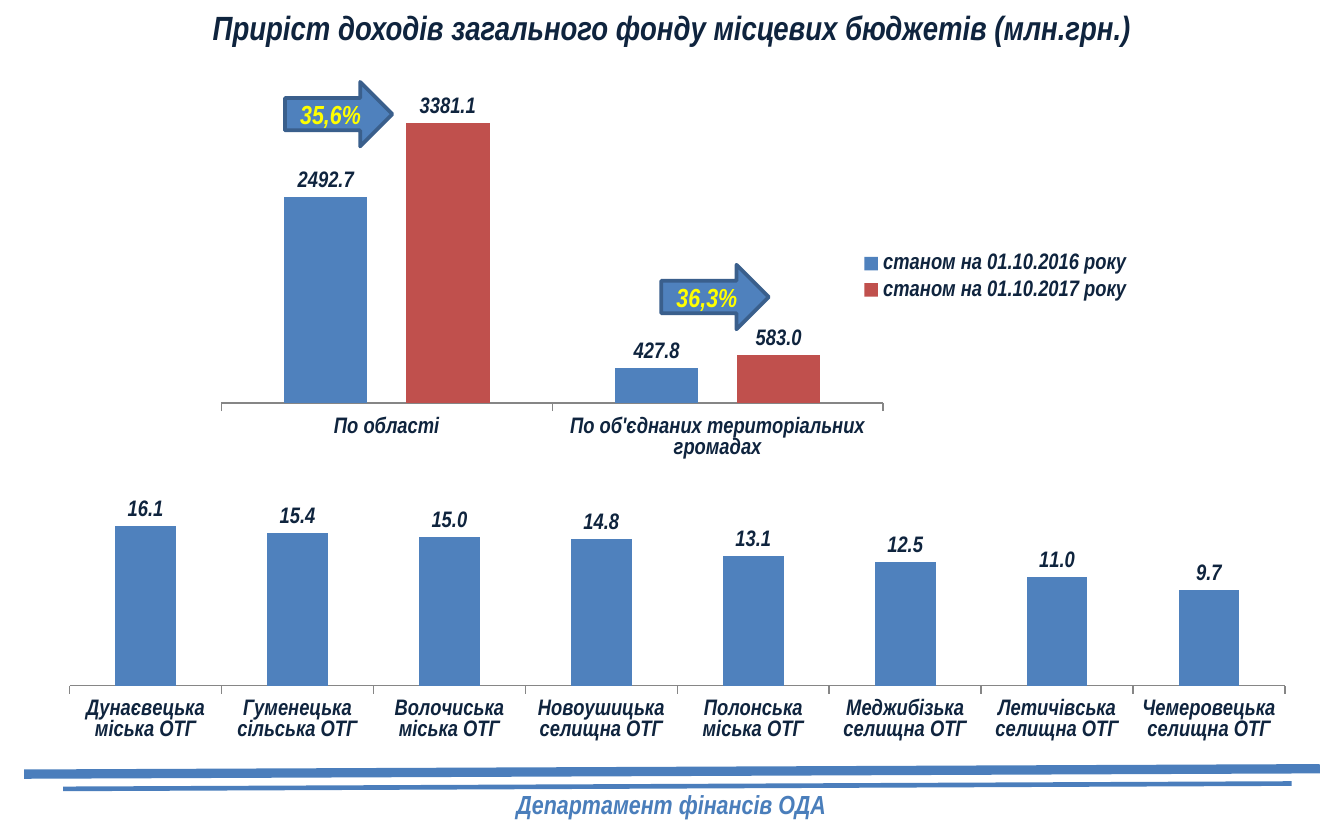
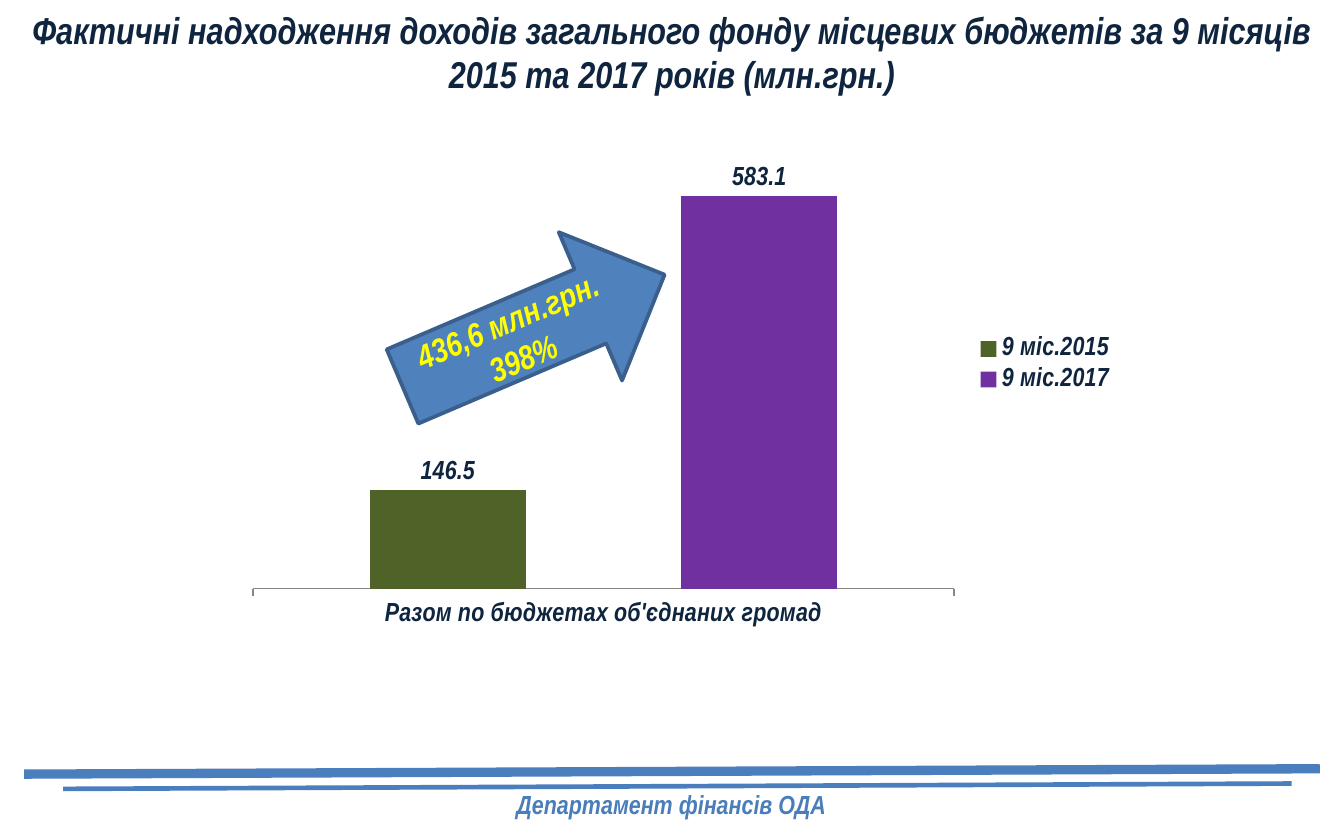
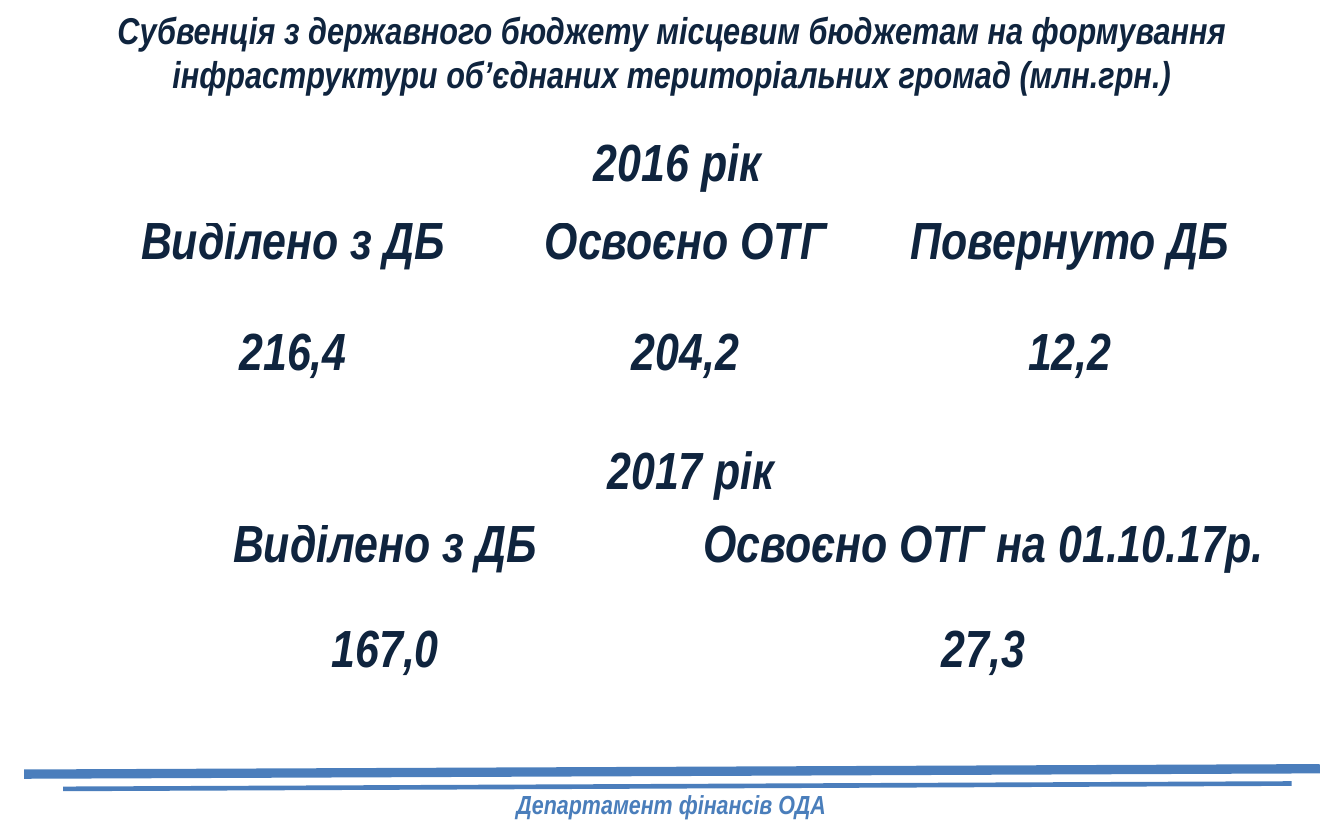
"""Local budget revenue: three slides with charts, arrows and tables."""
from dataclasses import dataclass
from typing import NamedTuple, Optional

from lxml import etree
from pptx import Presentation
from pptx import util as u
from pptx.chart.data import CategoryChartData
from pptx.dml.color import RGBColor
from pptx.enum import chart as charts, shapes, text
from pptx.oxml import ns

# Grid: 100 columns by 62.5 rows
COLUMNS, ROWS = 100, 62.5
SLIDE_WIDTH, SLIDE_HEIGHT = u.Inches(10), u.Inches(6.25)

FONT = "Arial Narrow"
NAVY = RGBColor(0x0F, 0x24, 0x3E)
FOOTER_BLUE = RGBColor(0x4A, 0x7E, 0xBB)
BAND_BLUE = RGBColor(0x4B, 0x7E, 0xBC)
BLUE = RGBColor(0x4F, 0x81, 0xBD)
ARROW_EDGE = RGBColor(0x3A, 0x5F, 0x8C)
RED = RGBColor(0xC0, 0x50, 0x4D)
OLIVE = RGBColor(0x4F, 0x62, 0x28)
PURPLE = RGBColor(0x70, 0x30, 0xA0)
YELLOW = RGBColor(0xFF, 0xFF, 0x00)
AXIS_GRAY = RGBColor(0x86, 0x86, 0x86)


def across(columns: float) -> u.Emu:
    return u.Emu(round(SLIDE_WIDTH * columns / COLUMNS))


def down(rows: float) -> u.Emu:
    return u.Emu(round(SLIDE_HEIGHT * rows / ROWS))


class Frame(NamedTuple):
    """Place on the grid, in columns and rows."""
    left: float
    top: float
    width: float
    height: float

    def lengths(self) -> tuple:
        return (across(self.left), down(self.top),
                across(self.width), down(self.height))


class Band(NamedTuple):
    left: float
    start_row: float
    right: float
    end_row: float
    weight: float


class Series(NamedTuple):
    name: str
    values: tuple
    color: RGBColor


@dataclass
class BarChart:
    frame: Frame
    plot: tuple  # left, top, width, height as shares of the chart
    categories: tuple
    series: tuple
    maximum: float
    size: int = 12
    overlap: int = 0
    legend: bool = False


@dataclass
class Arrow:
    frame: Frame
    lines: tuple
    size: int = 14
    rotation: float = 0


@dataclass
class YearTable:
    frame: Frame
    widths: tuple
    heights: tuple
    margin: float
    year: str
    headings: tuple
    amounts: tuple


@dataclass
class Page:
    title: str
    title_size: int
    title_rows: float
    charts: tuple = ()
    arrows: tuple = ()
    tables: tuple = ()


FOOTER = "Департамент фінансів ОДА"
FOOTER_FRAME = Frame(29.4, 58.2, 41.1, 3.4)
BANDS = (Band(1.8, 57.6, 98.2, 57.2, 5), Band(4.7, 58.7, 96.1, 58.3, 2.5))

PAGES = (
    Page(
        "Приріст доходів загального фонду місцевих бюджетів (млн.грн.)", 18, 4,
        charts=(
            BarChart(
                Frame(13.3, 4.1, 71.9, 33), (0.044, 0.038, 0.685, 0.747),
                ("По області", "По об'єднаних територіальних громадах"),
                (Series("станом на 01.10.2016 року", (2492.7, 427.8), BLUE),
                 Series("станом на 01.10.2017 року", (3381.1, 583), RED)),
                maximum=4000, overlap=-46, legend=True),
            BarChart(
                Frame(3.3, 37.2, 94.2, 18.2), (0.02, 0.03, 0.96, 0.73),
                ("Дунаєвецька міська ОТГ", "Гуменецька сільська ОТГ",
                 "Волочиська міська ОТГ", "Новоушицька селищна ОТГ",
                 "Полонська міська ОТГ", "Меджибізька селищна ОТГ",
                 "Летичівська селищна ОТГ", "Чемеровецька селищна ОТГ"),
                (Series("Series 1",
                        (16.1, 15.4, 15, 14.8, 13.1, 12.5, 11, 9.7), BLUE),),
                maximum=18),
        ),
        arrows=(Arrow(Frame(21.2, 6.1, 8, 4.8), ("35,6%",)),
                Arrow(Frame(49.2, 19.7, 8, 4.8), ("36,3%",))),
    ),
    Page(
        "Фактичні надходження доходів загального фонду місцевих бюджетів "
        "за 9 місяців 2015 та 2017 років (млн.грн.)", 20, 7.7,
        charts=(
            BarChart(
                Frame(17.3, 4.9, 66.7, 44.4), (0.023, 0.087, 0.782, 0.789),
                ("Разом по бюджетах об'єднаних громад",),
                (Series("9 міс.2015", (146.5,), OLIVE),
                 Series("9 міс.2017", (583.1,), PURPLE)),
                maximum=700, size=14, overlap=-100, legend=True),
        ),
        arrows=(Arrow(Frame(29.1, 18.6, 21.2, 12), ("436,6 млн.грн.", "398%"),
                      size=18, rotation=336.9),),
    ),
    Page(
        "Субвенція з державного бюджету місцевим бюджетам на формування "
        "інфраструктури об’єднаних територіальних громад (млн.грн.)", 20, 7.7,
        tables=(
            YearTable(Frame(6.9, 8.5, 87, 19.9), (29.8, 28.6, 28.6),
                      (8, 6.4, 5.5), 0.5, "2016 рік",
                      ("Виділено з ДБ", "Освоєно ОТГ", "Повернуто ДБ"),
                      ("216,4", "204,2", "12,2")),
            YearTable(Frame(6.9, 31.8, 89, 18.7), (43.5, 45.5),
                      (7.2, 6, 5.5), 0.7, "2017 рік",
                      ("Виділено з ДБ", "Освоєно ОТГ на 01.10.17р."),
                      ("167,0", "27,3")),
        ),
    ),
)


def style_font(font, size: float, color: RGBColor) -> None:
    font.name = FONT
    font.size = u.Pt(size)
    font.bold = font.italic = True
    font.color.rgb = color


def write(frame, lines: tuple, size: float, color: RGBColor) -> None:
    """Fill a text frame with centred paragraphs."""
    frame.text = "\n".join(lines)
    for para in frame.paragraphs:
        para.alignment = text.PP_ALIGN.CENTER
        style_font(para.font, size, color)


def place(shape, frame: Frame) -> None:
    shape.left, shape.top, shape.width, shape.height = frame.lengths()


# Shared parts
def add_title(slide, page: Page) -> None:
    title = slide.shapes.title
    place(title, Frame(0, 0, COLUMNS, page.title_rows))
    frame = title.text_frame
    frame.word_wrap = True
    frame.auto_size = text.MSO_AUTO_SIZE.NONE
    frame.vertical_anchor = text.MSO_ANCHOR.TOP
    write(frame, (page.title,), page.title_size, NAVY)


def add_footer(slide) -> None:
    for band in BANDS:
        line = slide.shapes.add_connector(
            shapes.MSO_CONNECTOR.STRAIGHT, across(band.left),
            down(band.start_row), across(band.right), down(band.end_row))
        line.line.color.rgb = BAND_BLUE
        line.line.width = u.Pt(band.weight)
        etree.SubElement(line._element.spPr, ns.qn("a:effectLst"))
    box = slide.shapes.add_textbox(*FOOTER_FRAME.lengths())
    box.text_frame.word_wrap = True
    write(box.text_frame, (FOOTER,), 14, FOOTER_BLUE)


# Charts
def set_plot_layout(chart, shares: tuple) -> None:
    plot_area = chart._chartSpace.chart.plotArea
    for old in plot_area.findall(ns.qn("c:layout")):
        plot_area.remove(old)
    layout = etree.Element(ns.qn("c:layout"))
    manual = etree.SubElement(layout, ns.qn("c:manualLayout"))
    settings = [("layoutTarget", "inner"), ("xMode", "edge"), ("yMode", "edge")]
    settings += zip("xywh", shares)
    for name, value in settings:
        etree.SubElement(manual, ns.qn(f"c:{name}")).set("val", str(value))
    plot_area.insert(0, layout)


def clear_background(chart) -> None:
    properties = etree.Element(ns.qn("c:spPr"))
    etree.SubElement(properties, ns.qn("a:noFill"))
    line = etree.SubElement(properties, ns.qn("a:ln"))
    etree.SubElement(line, ns.qn("a:noFill"))
    chart._chartSpace.chart.addnext(properties)


def add_bar_chart(slide, bars: BarChart) -> None:
    data = CategoryChartData(number_format="0.0")
    data.categories = bars.categories
    for series in bars.series:
        data.add_series(series.name, series.values)
    chart = slide.shapes.add_chart(
        charts.XL_CHART_TYPE.COLUMN_CLUSTERED, *bars.frame.lengths(), data).chart
    clear_background(chart)
    set_plot_layout(chart, bars.plot)
    style_font(chart.font, bars.size, NAVY)
    chart.has_title = False

    chart.has_legend = bars.legend
    if bars.legend:
        chart.legend.position = charts.XL_LEGEND_POSITION.RIGHT
        chart.legend.include_in_layout = False
        style_font(chart.legend.font, bars.size, NAVY)

    values = chart.value_axis
    values.visible = values.has_major_gridlines = False
    values.minimum_scale, values.maximum_scale = 0, bars.maximum
    names = chart.category_axis
    names.major_tick_mark = charts.XL_TICK_MARK.OUTSIDE
    names.format.line.color.rgb = AXIS_GRAY
    style_font(names.tick_labels.font, bars.size, NAVY)

    plot = chart.plots[0]
    plot.vary_by_categories = False
    plot.gap_width, plot.overlap = 150, bars.overlap
    plot.has_data_labels = True
    labels = plot.data_labels
    labels.show_value = True
    labels.number_format, labels.number_format_is_linked = "0.0", False
    labels.position = charts.XL_LABEL_POSITION.OUTSIDE_END
    style_font(labels.font, bars.size, NAVY)
    for drawn, series in zip(plot.series, bars.series):
        drawn.format.fill.solid()
        drawn.format.fill.fore_color.rgb = series.color


# Growth arrows
def add_arrow(slide, arrow: Arrow) -> None:
    shape = slide.shapes.add_shape(
        shapes.MSO_SHAPE.RIGHT_ARROW, *arrow.frame.lengths())
    shape.rotation = arrow.rotation
    shape.shadow.inherit = False
    shape.fill.solid()
    shape.fill.fore_color.rgb = BLUE
    shape.line.color.rgb = ARROW_EDGE
    shape.line.width = u.Pt(2)
    frame = shape.text_frame
    frame.word_wrap = False
    frame.vertical_anchor = text.MSO_ANCHOR.MIDDLE
    write(frame, arrow.lines, arrow.size, YELLOW)


# Tables
def add_year_table(slide, year: YearTable) -> None:
    count = len(year.widths)
    table = slide.shapes.add_table(3, count, *year.frame.lengths()).table
    table.first_row = table.horz_banding = False
    for column, width in zip(table.columns, year.widths):
        column.width = across(width)
    for row, height in zip(table.rows, year.heights):
        row.height = down(height)
    table.cell(0, 0).merge(table.cell(0, count - 1))

    anchors = (text.MSO_ANCHOR.MIDDLE, text.MSO_ANCHOR.TOP,
               text.MSO_ANCHOR.BOTTOM)
    contents = ((year.year,), year.headings, year.amounts)
    for row, (anchor, words) in enumerate(zip(anchors, contents)):
        for column in range(count):
            cell = table.cell(row, column)
            cell.fill.background()
            cell.margin_left = cell.margin_right = across(year.margin)
            cell.margin_top = cell.margin_bottom = 0
            cell.vertical_anchor = anchor
            if column < len(words):
                write(cell.text_frame, (words[column],), 28, NAVY)


def main() -> None:
    deck = Presentation()
    deck.slide_width, deck.slide_height = SLIDE_WIDTH, SLIDE_HEIGHT
    title_only = deck.slide_layouts[5]
    for page in PAGES:
        slide = deck.slides.add_slide(title_only)
        add_title(slide, page)
        add_footer(slide)
        for bars in page.charts:
            add_bar_chart(slide, bars)
        for arrow in page.arrows:
            add_arrow(slide, arrow)
        for year in page.tables:
            add_year_table(slide, year)
    deck.save("out.pptx")


if __name__ == "__main__":
    main()
